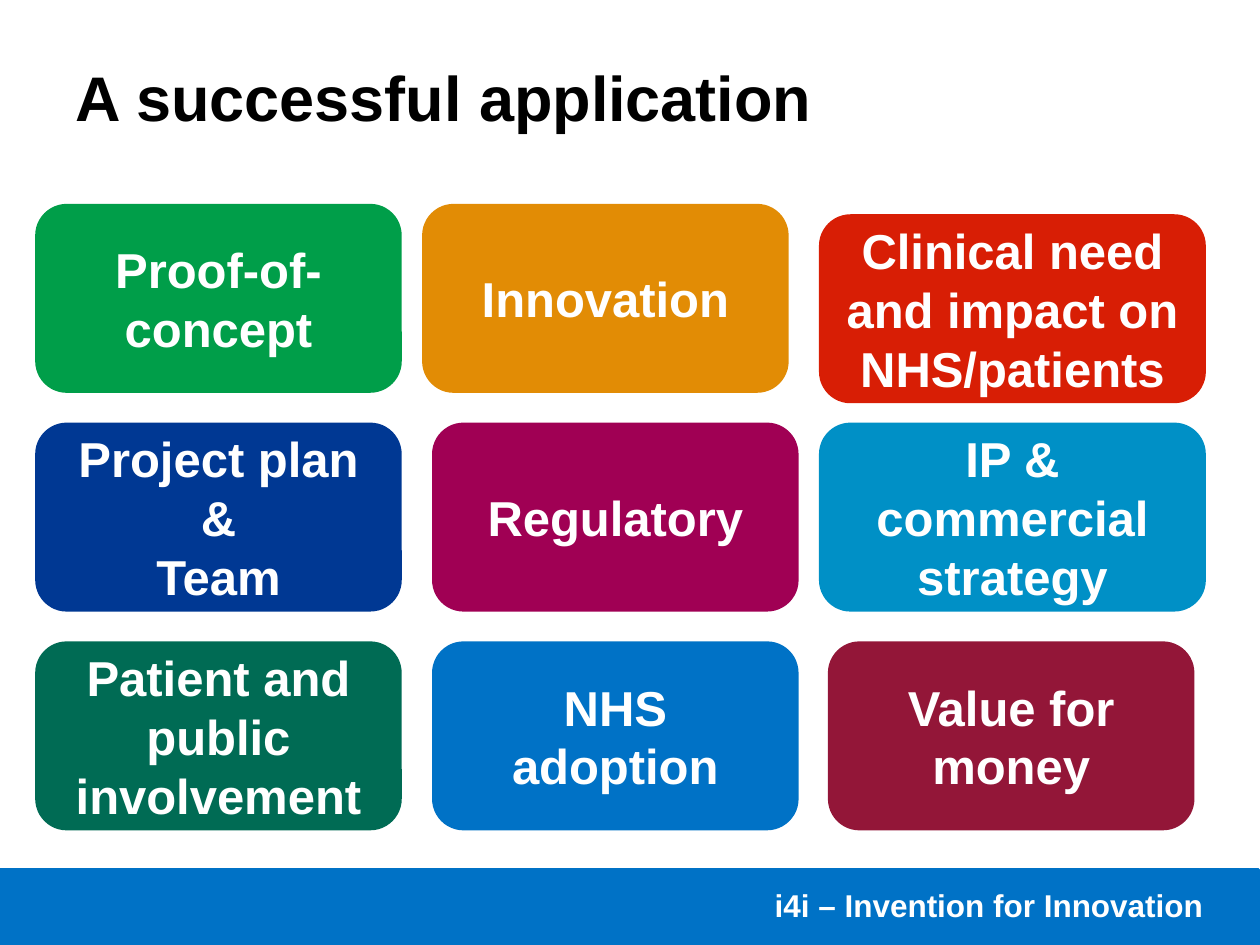
import pptx
import pptx.dml.color
import pptx.enum.shapes
import pptx.enum.text
import pptx.util
from pptx.util import Cm

ALIGN = pptx.enum.text.PP_ALIGN
ANCHOR = pptx.enum.text.MSO_ANCHOR
SHAPE = pptx.enum.shapes.MSO_SHAPE

WHITE = "FFFFFF"
BLUE = "0072C6"
CARD_WIDTH, WIDE_CARD, CARD_HEIGHT = 7.39, 7.8, 3.81
ROW_TOP, ROW_STEP = 4.11, 4.41

# Each row lists: text, fill, left, width, drop below the row's top.
CARD_ROWS = [
    [
        ("Proof-of-concept", "009E49", 0.71, CARD_WIDTH, 0),
        ("Innovation", "E28C05", 8.51, CARD_WIDTH, 0),
        ("Clinical need and impact on NHS/patients", "D81E05", 16.51, WIDE_CARD, 0.21),
    ],
    [
        ("Project plan\n&\nTeam", "003893", 0.71, CARD_WIDTH, 0),
        ("Regulatory", "A00054", 8.71, CARD_WIDTH, 0),
        ("IP & commercial strategy", "0090C6", 16.51, WIDE_CARD, 0),
    ],
    [
        ("Patient and public involvement", "006B54", 0.71, CARD_WIDTH, 0),
        ("NHS adoption", BLUE, 8.71, CARD_WIDTH, 0),
        ("Value for money", "931638", 16.69, CARD_WIDTH, 0),
    ],
]


def color(value):
    """Return the colour for a hex string."""
    return pptx.dml.color.RGBColor.from_string(value)


def write_text(shape, text, size, font_color, alignment, anchor):
    """Fill a shape with bold Arial text."""
    text_frame = shape.text_frame
    text_frame.text = text
    text_frame.word_wrap = True
    text_frame.auto_size = pptx.enum.text.MSO_AUTO_SIZE.NONE
    text_frame.vertical_anchor = anchor
    for paragraph in text_frame.paragraphs:
        paragraph.alignment = alignment
        for run in paragraph.runs:
            run.font.name = "Arial"
            run.font.size = pptx.util.Pt(size)
            run.font.bold = True
            run.font.color.rgb = color(font_color)


def add_block(slide, kind, left, top, width, height, fill):
    """Add a flat filled shape without an outline."""
    shape = slide.shapes.add_shape(kind, Cm(left), Cm(top), Cm(width), Cm(height))
    shape.shadow.inherit = False
    shape.fill.solid()
    shape.fill.fore_color.rgb = color(fill)
    shape.line.fill.background()
    return shape


def add_card(slide, text, fill, left, top, width):
    """Add a rounded card with centred white text."""
    card = add_block(slide, SHAPE.ROUNDED_RECTANGLE, left, top, width, CARD_HEIGHT, fill)
    card.adjustments[0] = 0.167
    write_text(card, text, 28, WHITE, ALIGN.CENTER, ANCHOR.MIDDLE)


def add_footer(slide):
    """Add the blue footer band and its programme name."""
    band = add_block(slide, SHAPE.RECTANGLE, 0, 17.53, 25.37, 1.5, BLUE)
    band.line.color.rgb = color(BLUE)
    band.line.width = pptx.util.Pt(2)
    label = slide.shapes.add_textbox(Cm(14.27), Cm(17.73), Cm(10.24), Cm(1.02))
    write_text(label, "i4i – Invention for Innovation", 18, WHITE, ALIGN.RIGHT, ANCHOR.TOP)


def format_title(slide):
    """Place and write the slide title."""
    title = slide.shapes.title
    title.left, title.top, title.width, title.height = Cm(1.27), Cm(0.76), Cm(17.42), Cm(2.36)
    write_text(title, "A successful application", 36, "000000", ALIGN.LEFT, ANCHOR.MIDDLE)


def main():
    """Build and save the slide."""
    presentation = pptx.Presentation()
    presentation.slide_width, presentation.slide_height = Cm(25.4), Cm(19.05)
    slide = presentation.slides.add_slide(presentation.slide_layouts[5])
    add_footer(slide)
    format_title(slide)
    for row, cards in enumerate(CARD_ROWS):
        for text, fill, left, width, drop in cards:
            add_card(slide, text, fill, left, ROW_TOP + row * ROW_STEP + drop, width)
    presentation.save("out.pptx")


if __name__ == "__main__":
    main()
